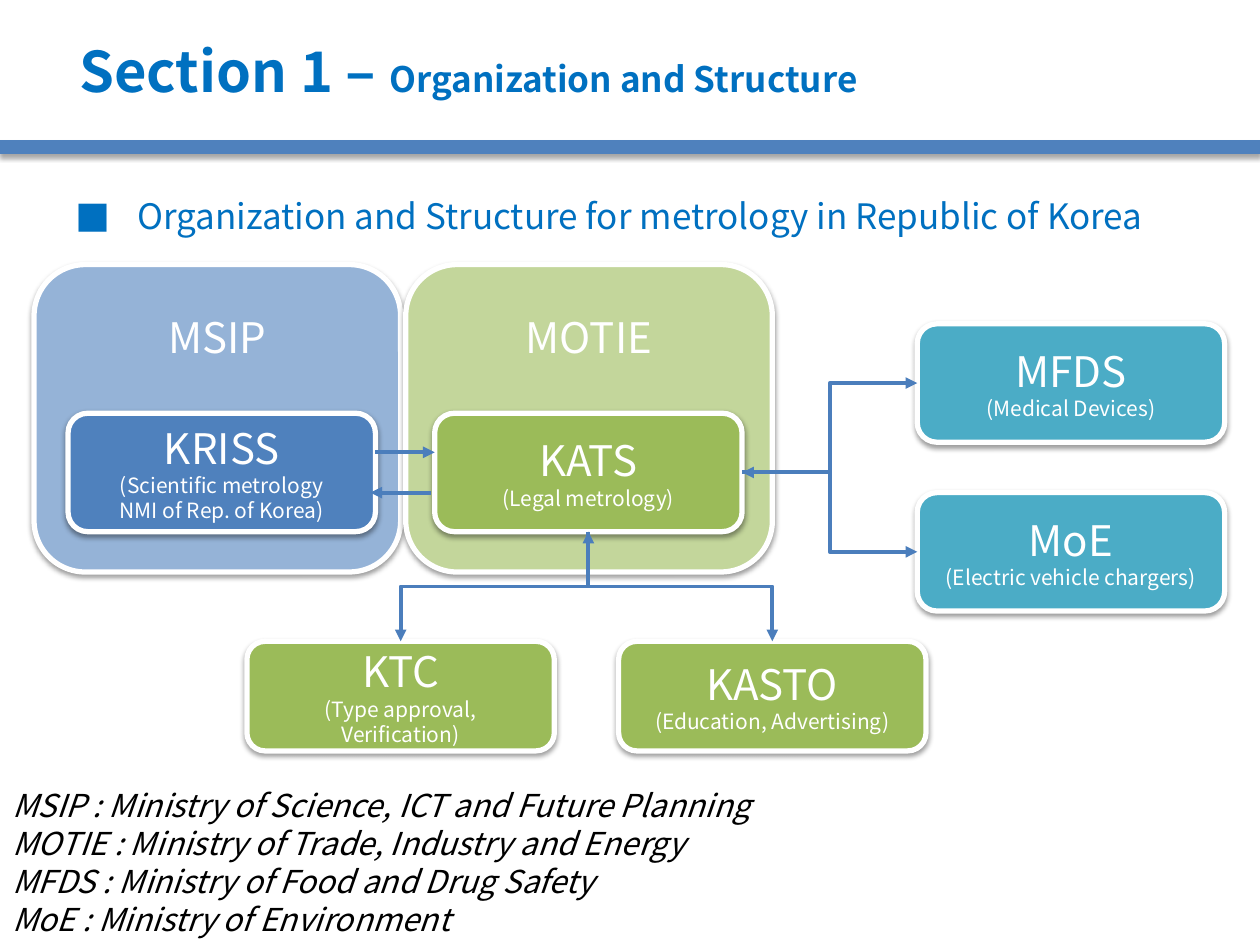
from collections import namedtuple
from dataclasses import dataclass

from lxml.etree import SubElement
from pptx import Presentation
from pptx.dml.color import RGBColor
from pptx.enum.shapes import MSO_CONNECTOR, MSO_SHAPE
from pptx.enum.text import MSO_ANCHOR, MSO_AUTO_SIZE, PP_ALIGN
from pptx.oxml.ns import qn
from pptx.util import Inches, Pt

Box = namedtuple("Box", "left top width height")


@dataclass(frozen=True)
class Theme:
    font: str = "Noto Sans CJK KR"
    heading: str = "0070C0"
    text: str = "000000"
    white: str = "FFFFFF"
    blue: str = "4F81BD"
    light_blue: str = "95B3D7"
    green: str = "9BBB59"
    light_green: str = "C3D69B"
    teal: str = "4BACC6"
    arrow: str = "4B7EBC"
    title_size: int = 32
    subtitle_size: int = 20
    name_size: int = 24
    legend_size: int = 18
    detail_size: int = 12


THEME = Theme()


def color(value):
    return RGBColor.from_string(value)


def place(shape, box):
    shape.left, shape.top, shape.width, shape.height = map(Inches, box)


def format_runs(paragraph, size, font_color, bold=False, italic=False):
    for run in paragraph.runs:
        run.font.name = THEME.font
        run.font.size = Pt(size)
        run.font.color.rgb = color(font_color)
        run.font.bold = bold
        run.font.italic = italic


def add_shadow(shape, distance, opacity):
    properties = shape._element.spPr
    for effects in properties.findall(qn("a:effectLst")):
        properties.remove(effects)
    effects = SubElement(properties, qn("a:effectLst"))
    shadow = SubElement(effects, qn("a:outerShdw"), blurRad=str(Pt(3.1)),
                        dist=str(Pt(distance)), dir="5400000", rotWithShape="0")
    shade = SubElement(shadow, qn("a:srgbClr"), val="000000")
    SubElement(shade, qn("a:alpha"), val=str(opacity * 1000))


def add_line(slide, kind, start, end, line_color=THEME.arrow, width=2.25, ends=()):
    connector = slide.shapes.add_connector(kind, *map(Inches, start + end))
    connector.line.color.rgb = color(line_color)
    connector.line.width = Pt(width)
    for name in ends:
        SubElement(connector.line._get_or_add_ln(), qn(f"a:{name}"), type="triangle")
    SubElement(connector._element.spPr, qn("a:effectLst"))
    return connector


def add_downward_elbow(slide, start, end, ends):
    center_x, center_y = (start[0] + end[0]) / 2, (start[1] + end[1]) / 2
    drop, shift = end[1] - start[1], end[0] - start[0]
    direction = 1 if shift < 0 else -1
    half_width, half_height = direction * drop / 2, abs(shift) / 2
    connector = add_line(slide, MSO_CONNECTOR.ELBOW,
                         (center_x - half_width, center_y - half_height),
                         (center_x + half_width, center_y + half_height), ends=ends)
    rotation = 90 if direction > 0 else 270
    connector._element.spPr.find(qn("a:xfrm")).set("rot", str(rotation * 60000))


def add_card(slide, box, fill, name, details=()):
    card = slide.shapes.add_shape(MSO_SHAPE.ROUNDED_RECTANGLE, *map(Inches, box))
    card.fill.solid()
    card.fill.fore_color.rgb = color(fill)
    card.line.color.rgb = color(THEME.white)
    card.line.width = Pt(3)
    card.shadow.inherit = False
    add_shadow(card, 1.6, 38)
    frame = card.text_frame
    frame.word_wrap = True
    frame.vertical_anchor = MSO_ANCHOR.MIDDLE
    frame.text = "\n".join((name, *details))
    for index, paragraph in enumerate(frame.paragraphs):
        paragraph.alignment = PP_ALIGN.CENTER
        format_runs(paragraph, THEME.detail_size if index else THEME.name_size, THEME.white)
    return card


def add_ministry(slide, box, fill, name):
    frame = add_card(slide, box, fill, name).text_frame
    frame.vertical_anchor = MSO_ANCHOR.TOP
    frame.margin_top = Inches(0.25)


def add_header(slide, box):
    title = slide.shapes.title
    place(title, box)
    frame = title.text_frame
    frame.auto_size = MSO_AUTO_SIZE.NONE
    frame.vertical_anchor = MSO_ANCHOR.MIDDLE
    paragraph = frame.paragraphs[0]
    paragraph.alignment = PP_ALIGN.LEFT
    for text in ("Section 1 – ", "Organization and Structure"):
        paragraph.add_run().text = text
    format_runs(paragraph, THEME.title_size, THEME.heading, bold=True)
    paragraph.runs[1].font.size = Pt(THEME.subtitle_size)
    rule = add_line(slide, MSO_CONNECTOR.STRAIGHT, (0, 1.17), (10, 1.17), THEME.blue, 8)
    add_shadow(rule, 1.8, 35)


def add_topic(slide, box):
    body = slide.placeholders[1]
    place(body, box)
    frame = body.text_frame
    frame.auto_size = MSO_AUTO_SIZE.NONE
    frame.text = "Organization and Structure for metrology in Republic of Korea"
    paragraph = frame.paragraphs[0]
    paragraph.line_spacing = 1.5
    paragraph.space_before = Pt(0)
    properties = paragraph._p.get_or_add_pPr()
    properties.set("marL", str(Inches(0.49)))
    properties.set("indent", str(Inches(-0.49)))
    SubElement(properties, qn("a:buFont"), typeface=THEME.font)
    SubElement(properties, qn("a:buChar"), char="■")
    format_runs(paragraph, THEME.subtitle_size, THEME.heading)


def add_organization_chart(slide, box):
    left, top = box.left, box.top
    card_width, card_height, lower_height = 2.44, 0.94, 0.87
    ministry_step = 2.95
    ministries = (("MSIP", THEME.light_blue), ("MOTIE", THEME.light_green))
    for index, (name, fill) in enumerate(ministries):
        add_ministry(slide, Box(left + index * ministry_step, top, 2.91, 2.44), fill, name)

    kriss = Box(left + 0.27, top + 1.18, card_width, card_height)
    kats = kriss._replace(left=left + 3.18)
    ktc = Box(left + 1.69, top + 2.99, card_width, lower_height)
    kasto = ktc._replace(left=ktc.left + ministry_step)
    mfds = Box(left + box.width - card_width, top + 0.47, card_width, card_height)
    moe = mfds._replace(top=mfds.top + 1.34)
    cards = (
        (kats, THEME.green, "KATS", ("(Legal metrology)",)),
        (ktc, THEME.green, "KTC", ("(Type approval, Verification)",)),
        (kasto, THEME.green, "KASTO", ("(Education, Advertising)",)),
        (kriss, THEME.blue, "KRISS", ("(Scientific metrology", "NMI of Rep. of Korea)")),
        (moe, THEME.teal, "MoE", ("(Electric vehicle chargers)",)),
        (mfds, THEME.teal, "MFDS", ("(Medical Devices)",)),
    )
    for card in cards:
        add_card(slide, *card)

    one_way, two_way = ("tailEnd",), ("headEnd", "tailEnd")
    kats_right = kats.left + card_width
    kats_bottom = (kats.left + card_width / 2, kats.top + card_height)
    for target, ends in ((ktc, one_way), (kasto, two_way)):
        add_downward_elbow(slide, kats_bottom, (target.left + card_width / 2, target.top), ends)
    for target, ends in ((mfds, two_way), (moe, one_way)):
        add_line(slide, MSO_CONNECTOR.ELBOW, (kats_right, kats.top + card_height / 2),
                 (target.left, target.top + card_height / 2), ends=ends)
    kriss_right = kriss.left + card_width
    upper, lower = kriss.top + 0.31, kriss.top + 0.63
    add_line(slide, MSO_CONNECTOR.STRAIGHT, (kriss_right, upper), (kats.left, upper), ends=one_way)
    add_line(slide, MSO_CONNECTOR.STRAIGHT, (kats.left - 0.03, lower),
             (kriss_right - 0.04, lower), ends=one_way)


def add_legend(slide, box):
    frame = slide.shapes.add_textbox(*map(Inches, box)).text_frame
    frame.word_wrap = False
    frame.auto_size = MSO_AUTO_SIZE.SHAPE_TO_FIT_TEXT
    frame.text = "\n".join((
        "MSIP : Ministry of Science, ICT and Future Planning",
        "MOTIE : Ministry of Trade, Industry and Energy",
        "MFDS : Ministry of Food and Drug Safety",
        "MoE : Ministry of Environment",
    ))
    for paragraph in frame.paragraphs:
        format_runs(paragraph, THEME.legend_size, THEME.text, italic=True)


def main():
    presentation = Presentation()
    presentation.slide_width, presentation.slide_height = Inches(10), Inches(7.5)
    slide = presentation.slides.add_slide(presentation.slide_layouts[1])
    add_header(slide, Box(0.53, 0.16, 9, 0.79))
    add_topic(slide, Box(0.5, 1.33, 9, 0.77))
    add_organization_chart(slide, Box(0.27, 2.1, 9.45, 3.86))
    add_legend(slide, Box(0, 6.19, 6.2, 1.31))
    presentation.save("out.pptx")


if __name__ == "__main__":
    main()
